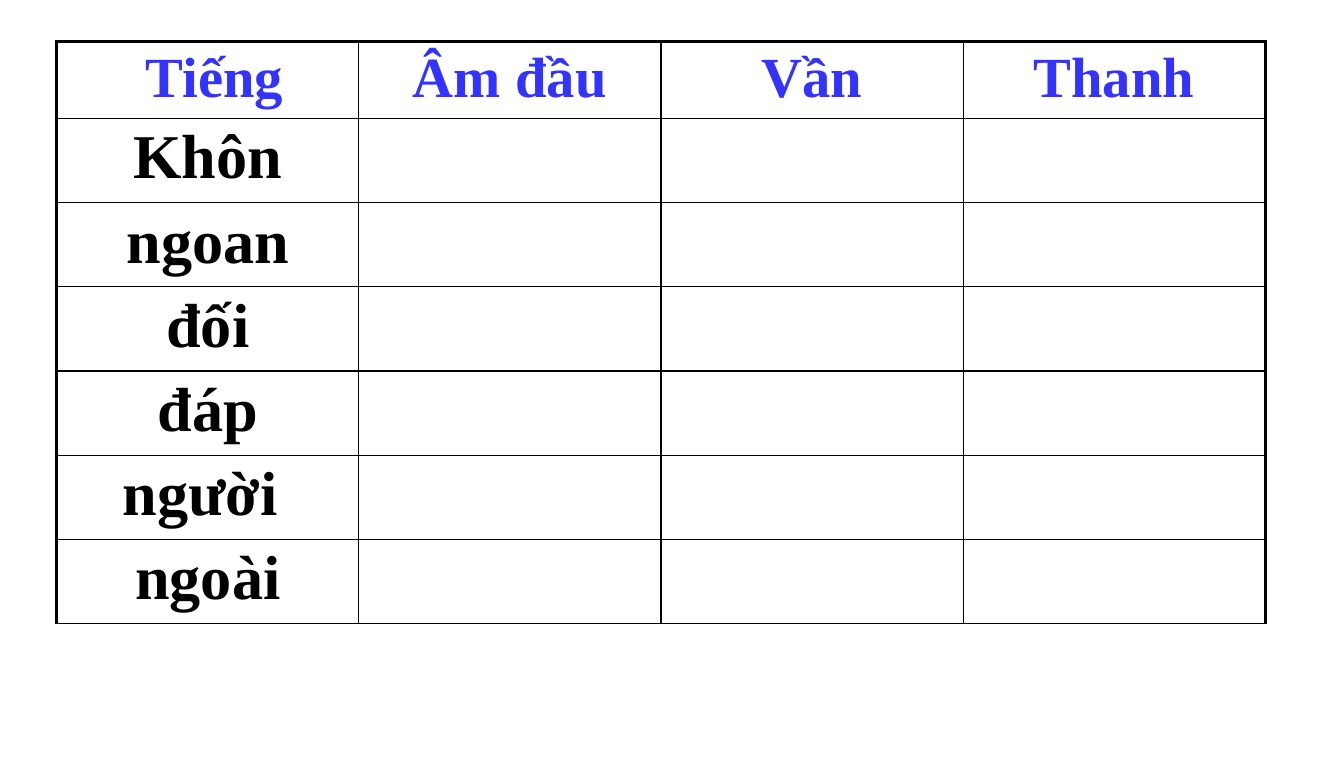
from pptx import Presentation
from pptx.dml.color import RGBColor
from pptx.enum import text as tx
from pptx.oxml import parse_xml
from pptx.oxml import ns
from pptx.util import Inches, Pt

HEADS = [" Tiếng", "Âm đầu", "Vần", "Thanh"]
WORDS = ["Khôn", "ngoan", "đối", "đáp", "người ", "ngoài"]
ROWS = [HEADS] + [[word, "", "", ""] for word in WORDS]

BLUE = RGBColor(0x33, 0x33, 0xFF)
BLACK = RGBColor(0, 0, 0)
FONT = "Times New Roman"
THIN, THICK = 1, 2.25

LEFT, TOP, WIDTH = Inches(0.57), Inches(0.42), Inches(12.14)
HEAD_H, BODY_H = Inches(0.77), Inches(5.07)


def add_edge(cell, side, pts):
    edge = parse_xml(
        f'<a:ln{side} {ns.nsdecls("a")} w="{Pt(pts)}" cap="flat" cmpd="sng">'
        f'<a:solidFill><a:srgbClr val="{BLACK}"/></a:solidFill>'
        f'<a:prstDash val="solid"/></a:ln{side}>')
    props = cell._tc.get_or_add_tcPr()
    props.insert(len(props) - 1, edge)


def fill_cell(cell, word, row, col):
    cell.fill.background()
    cell.margin_left = cell.margin_right = Inches(0.14)
    cell.margin_top = cell.margin_bottom = Inches(0.05)
    add_edge(cell, "L", THICK if col == 0 else THIN)
    add_edge(cell, "R", THICK if col == len(HEADS) - 1 else THIN)
    add_edge(cell, "T", THICK if row == 0 else THIN)
    add_edge(cell, "B", THIN)
    if word:
        para = cell.text_frame.paragraphs[0]
        para.alignment = tx.PP_ALIGN.CENTER
        run = para.add_run()
        run.text = word
        run.font.name = FONT
        run.font.bold = True
        run.font.size = Pt(41 if row == 0 else 45)
        run.font.color.rgb = BLUE if row == 0 else BLACK


def main():
    deck = Presentation()
    deck.slide_width, deck.slide_height = Inches(13.5), Inches(7.6)
    slide = deck.slides.add_slide(deck.slide_layouts[6])
    table = slide.shapes.add_table(
        len(ROWS), len(HEADS), LEFT, TOP, WIDTH, HEAD_H + BODY_H).table
    table.first_row = table.horz_banding = False
    for col in table.columns:
        col.width = WIDTH // len(HEADS)
    for r, words in enumerate(ROWS):
        table.rows[r].height = HEAD_H if r == 0 else BODY_H // len(WORDS)
        for c, word in enumerate(words):
            fill_cell(table.cell(r, c), word, r, c)
    deck.save("out.pptx")


if __name__ == "__main__":
    main()
